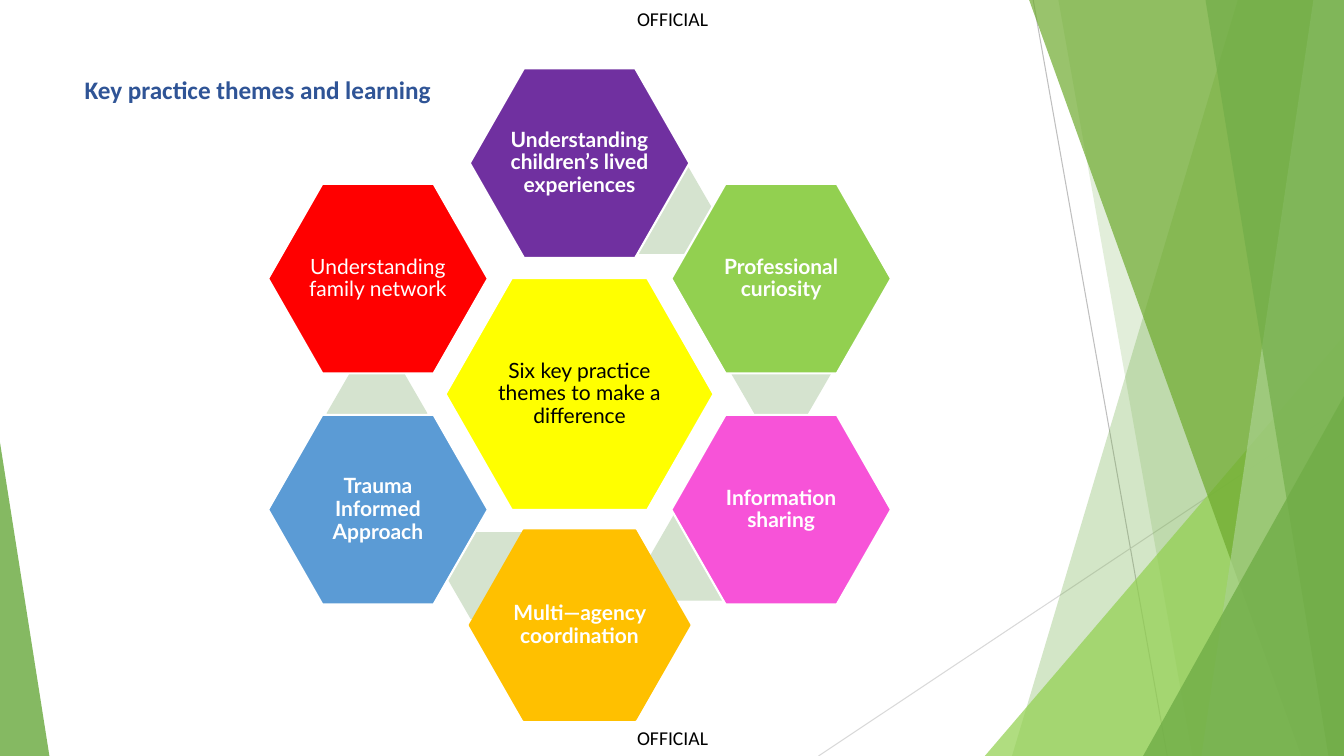
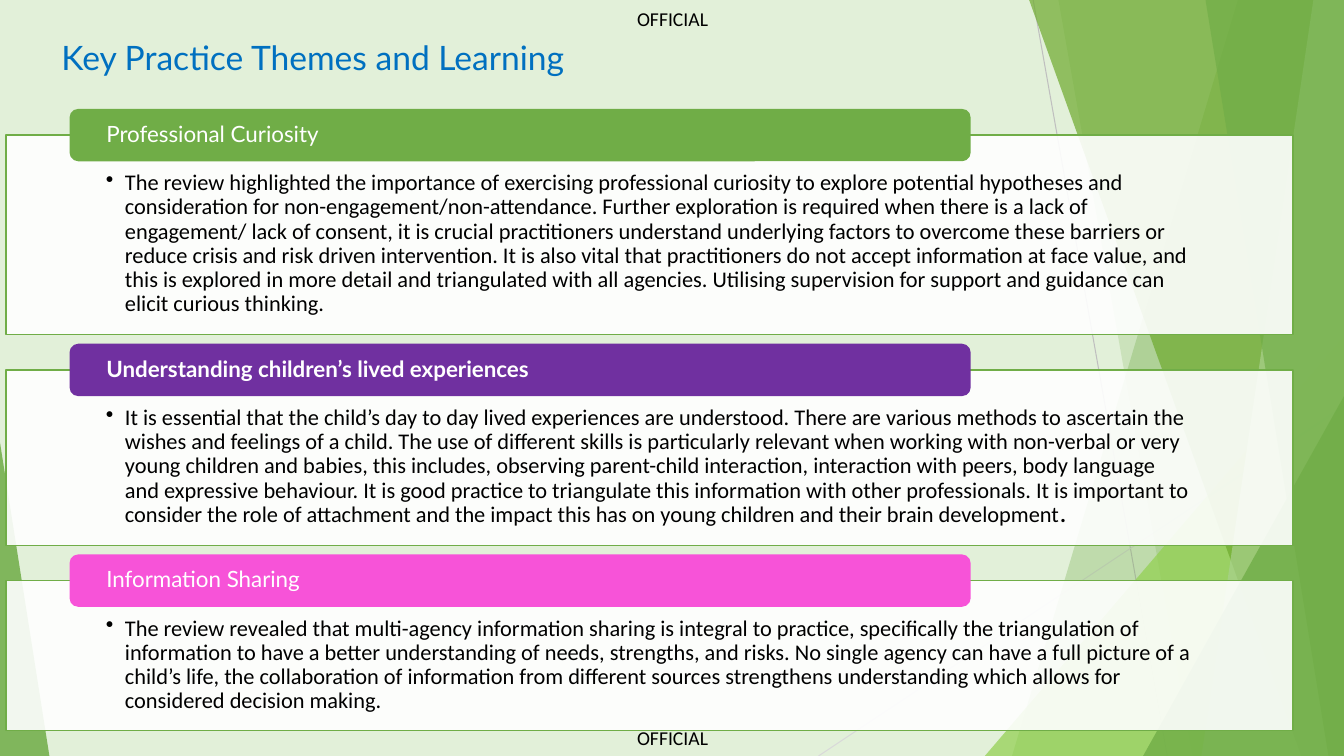
"""Build two slides on practice themes, laid out on a grid of 160 columns by 90 rows."""
from dataclasses import dataclass

import pptx
import pptx.dml.color
import pptx.enum.shapes
import pptx.enum.text
import pptx.oxml.ns
import pptx.util
from lxml import etree
from pptx.dml.color import RGBColor

COLS, ROWS = 160, 90
CELL = pptx.util.Inches(1 / 12)
KIND = pptx.enum.shapes.MSO_SHAPE
ALIGN = pptx.enum.text.PP_ALIGN
ANCHOR = pptx.enum.text.MSO_ANCHOR

WHITE = RGBColor(0xFF, 0xFF, 0xFF)
BLACK = RGBColor(0x00, 0x00, 0x00)
GREEN = RGBColor(0x70, 0xAD, 0x47)
LEAF = RGBColor(0x6E, 0xAA, 0x2E)
LIME = RGBColor(0x92, 0xD0, 0x50)
SAGE = RGBColor(0xA9, 0xD1, 0x8E)
MIST = RGBColor(0xD5, 0xE3, 0xCF)
PALE = RGBColor(0xE2, 0xF0, 0xD9)
GREY = RGBColor(0xBF, 0xBF, 0xBF)
SILVER = RGBColor(0xD9, 0xD9, 0xD9)
NAVY = RGBColor(0x2F, 0x54, 0x96)
BLUE = RGBColor(0x00, 0x70, 0xC0)
SKY = RGBColor(0x5B, 0x9B, 0xD5)
PURPLE = RGBColor(0x70, 0x30, 0xA0)
PINK = RGBColor(0xF7, 0x53, 0xD8)
GOLD = RGBColor(0xFF, 0xC0, 0x00)
RED = RGBColor(0xFF, 0x00, 0x00)
YELLOW = RGBColor(0xFF, 0xFF, 0x00)
SANS, HEAD = "Calibri", "Lato"


@dataclass(frozen=True)
class Box:
    left: float
    top: float
    width: float
    height: float

    def emu(self) -> list[int]:
        return [cells(n) for n in (self.left, self.top, self.width, self.height)]


@dataclass(frozen=True)
class Ray:
    start: tuple[float, float]
    end: tuple[float, float]
    color: RGBColor


@dataclass(frozen=True)
class Band:
    top: float
    foot: float
    color: RGBColor
    alpha: int


@dataclass(frozen=True)
class Wedge:
    box: Box
    peak: float
    color: RGBColor
    alpha: int


@dataclass(frozen=True)
class Petal:
    label: str
    col: int
    row: int
    color: RGBColor
    edge: RGBColor = WHITE
    bold: bool = True
    link: tuple[float, float] | None = None


@dataclass(frozen=True)
class Card:
    title: str
    body: str
    height: float
    color: RGBColor
    bold: bool = False
    tail: str = ""


RAYS = (
    Ray((123, 0), (138.96, ROWS), GREY),
    Ray((COLS, 48.36), (97.44, ROWS), SILVER),
)
DECOR = (
    Band(147.36, 120.48, GREEN, 30),
    Band(126, 141.96, GREEN, 20),
    Wedge(Box(117.24, 40, 42.76, 50), 1, LIME, 72),
    Band(122.52, 154.92, LEAF, 70),
    Band(156.36, 143.04, SAGE, 70),
    Band(143.52, 158.16, GREEN, 65),
    Wedge(Box(136.08, 47.16, 23.92, 42.84), 1, GREEN, 80),
    Wedge(Box(0, 52.68, 5.88, 37.32), 0, GREEN, 85),
)
HUB = (69, 46.92)
STEP = (24, 13.75)
PETALS = (
    Petal("Understanding children’s lived experiences", 0, -2, PURPLE, link=(9.96, -21.84)),
    Petal("Professional curiosity", 1, -1, LIME, link=(24, -2.52)),
    Petal("Information sharing", 1, 1, PINK, link=(14.28, 19.44)),
    Petal("Multi—agency coordination", 0, 2, GOLD, edge=GOLD, link=(-9.96, 21.6)),
    Petal("Trauma Informed Approach", -1, 1, SKY, link=(-24.12, 2.28)),
    Petal("Understanding family network", -1, -1, RED, bold=False),
)
CARDS = (
    Card(
        "Professional Curiosity",
        "The review highlighted the importance of exercising professional curiosity to explore "
        "potential hypotheses and consideration for non-engagement/non-attendance. Further "
        "exploration is required when there is a lack of engagement/ lack of consent, it is "
        "crucial practitioners understand underlying factors to overcome these barriers or "
        "reduce crisis and risk driven intervention. It is also vital that practitioners do not "
        "accept information at face value, and this is explored in more detail and triangulated "
        "with all agencies. Utilising supervision for support and guidance can elicit curious "
        "thinking.",
        23.76, GREEN,
    ),
    Card(
        "Understanding children’s lived experiences",
        "It is essential that the child’s day to day lived experiences are understood. There are "
        "various methods to ascertain the wishes and feelings of a child. The use of different "
        "skills is particularly relevant when working with non-verbal or very young children and "
        "babies, this includes, observing parent-child interaction, interaction with peers, body "
        "language and expressive behaviour. It is good practice to triangulate this information "
        "with other professionals. It is important to consider the role of attachment and the "
        "impact this has on young children and their brain development",
        20.88, PURPLE, bold=True, tail=".",
    ),
    Card(
        "Information Sharing",
        "The review revealed that multi-agency information sharing is integral to practice, "
        "specifically the triangulation of information to have a better understanding of needs, "
        "strengths, and risks. No single agency can have a full picture of a child’s life, the "
        "collaboration of information from different sources strengthens understanding which "
        "allows for considered decision making.",
        17.88, PINK,
    ),
)


def cells(count: float) -> int:
    return round(count * CELL)


def write(shape, text: str, *, size: float, face: str, color: RGBColor, bold: bool = False,
          tail: str = "", align=ALIGN.LEFT, anchor=ANCHOR.TOP, space: float = 1.0,
          pad: tuple = (0, 0, 0, 0), bullet: bool = False) -> None:
    frame = shape.text_frame
    frame.word_wrap = True
    frame.vertical_anchor = anchor
    (frame.margin_left, frame.margin_top,
     frame.margin_right, frame.margin_bottom) = map(cells, pad)
    para = frame.paragraphs[0]
    para.alignment, para.line_spacing = align, space
    for part, heavy in ((text, bold), (tail, True)):
        if part:
            run = para.add_run()
            run.text = part
            font = run.font
            font.size, font.name, font.bold = pptx.util.Pt(size), face, heavy
            font.color.rgb = color
    if bullet:
        props = para._p.get_or_add_pPr()
        hang = cells(2.28)
        props.set("marL", str(hang))
        props.set("indent", str(-hang))
        etree.SubElement(props, pptx.oxml.ns.qn("a:buChar"), char="•")


def note(slide, box: Box, text: str, **style) -> None:
    write(slide.shapes.add_textbox(*box.emu()), text, **style)


def paint(shape, color: RGBColor, *, alpha: int = 100, edge: RGBColor | None = None,
          width: float = 1) -> None:
    shape.shadow.inherit = False
    shape.fill.solid()
    shape.fill.fore_color.rgb = color
    if alpha < 100:
        tint = shape.element.spPr.find(".//" + pptx.oxml.ns.qn("a:srgbClr"))
        etree.SubElement(tint, pptx.oxml.ns.qn("a:alpha"), val=str(alpha * 1000))
    if edge is None:
        shape.line.fill.background()
    else:
        shape.line.color.rgb = edge
        shape.line.width = pptx.util.Pt(width)


def trace(slide, ray: Ray) -> None:
    ends = [cells(n) for n in (*ray.start, *ray.end)]
    line = slide.shapes.add_connector(pptx.enum.shapes.MSO_CONNECTOR.STRAIGHT, *ends)
    line.line.color.rgb = ray.color
    line.line.width = pptx.util.Pt(0.75)
    etree.SubElement(line.element.spPr, pptx.oxml.ns.qn("a:effectLst"))


def facet(slide, item: Band | Wedge) -> None:
    if isinstance(item, Wedge):
        shape = slide.shapes.add_shape(KIND.ISOSCELES_TRIANGLE, *item.box.emu())
        shape.adjustments[0] = item.peak
    else:
        pen = slide.shapes.build_freeform(cells(item.top), 0)
        rest = ((COLS, 0), (COLS, ROWS), (item.foot, ROWS))
        pen.add_line_segments([(cells(x), cells(y)) for x, y in rest], close=True)
        shape = pen.convert_to_shape()
    paint(shape, item.color, alpha=item.alpha)


def stage(deck, ground: RGBColor):
    slide = deck.slides.add_slide(deck.slide_layouts[6])
    slide.background.fill.solid()
    slide.background.fill.fore_color.rgb = ground
    for ray in RAYS:
        trace(slide, ray)
    for item in DECOR:
        facet(slide, item)
    for top in (0.84, 86.4):
        note(slide, Box(75.84, top, 8.88, 2.76), "OFFICIAL", size=14, face=SANS, color=BLACK)
    return slide


def title(slide, box: Box, text: str, **style) -> None:
    note(slide, box, text, pad=(1.2, 0.6, 1.2, 0.6), **style)


def hexa(slide, mid: tuple, size: tuple, color: RGBColor, *, adj: float = 0.286,
         edge: RGBColor | None = None):
    (x, y), (wide, high) = mid, size
    box = Box(x - wide / 2, y - high / 2, wide, high)
    shape = slide.shapes.add_shape(KIND.HEXAGON, *box.emu())
    shape.adjustments[0] = adj
    paint(shape, color, edge=edge, width=1.5)
    return shape


def label(shape, text: str, color: RGBColor, bold: bool) -> None:
    write(shape, text, size=15, face=HEAD, color=color, bold=bold, align=ALIGN.CENTER,
          anchor=ANCHOR.MIDDLE, space=0.9, pad=(0.24,) * 4)


def wheel(slide) -> None:
    x, y = HUB
    core = hexa(slide, HUB, (31.92, 27.6), YELLOW, edge=WHITE)
    label(core, "Six key practice themes to make a difference", BLACK, False)
    for petal in PETALS:
        if petal.link:
            mid = (x + petal.link[0], y + petal.link[1])
            hexa(slide, mid, (12, 10.32), MIST, adj=0.289)
        mid = (x + petal.col * STEP[0], y + petal.row * STEP[1])
        shape = hexa(slide, mid, (26.16, 22.56), petal.color, edge=petal.edge)
        label(shape, petal.label, WHITE, petal.bold)


def stack(slide) -> None:
    top, tab, gap = 12.96, 6.24, 1.08
    for card in CARDS:
        start = top + tab / 2
        body = slide.shapes.add_shape(KIND.RECTANGLE, *Box(0.72, start, 153.24, card.height).emu())
        paint(body, WHITE, alpha=90, edge=GREEN)
        write(body, card.body, size=16, face=SANS, color=BLACK, tail=card.tail, space=0.9,
              pad=(11.88, 4.32, 11.88, 1.44), bullet=True)
        head = slide.shapes.add_shape(KIND.ROUNDED_RECTANGLE, *Box(8.28, top, 107.28, tab).emu())
        paint(head, card.color)
        write(head, card.title, size=16, face=HEAD, color=WHITE, bold=card.bold,
              anchor=ANCHOR.MIDDLE, space=0.9, pad=(4.08, 0, 4.08, 0))
        top = start + card.height + gap


def main() -> None:
    deck = pptx.Presentation()
    deck.slide_width, deck.slide_height = cells(COLS), cells(ROWS)
    first = stage(deck, WHITE)
    title(first, Box(8.88, 8.04, 45, 6), "Key practice themes and learning",
          size=18, face=SANS, color=NAVY, bold=True, space=1.07)
    wheel(first)
    second = stage(deck, PALE)
    title(second, Box(6.12, 3.84, 81, 10.32), "Key Practice Themes and Learning",
          size=24, face=HEAD, color=BLUE)
    stack(second)
    deck.save("out.pptx")


if __name__ == "__main__":
    main()
